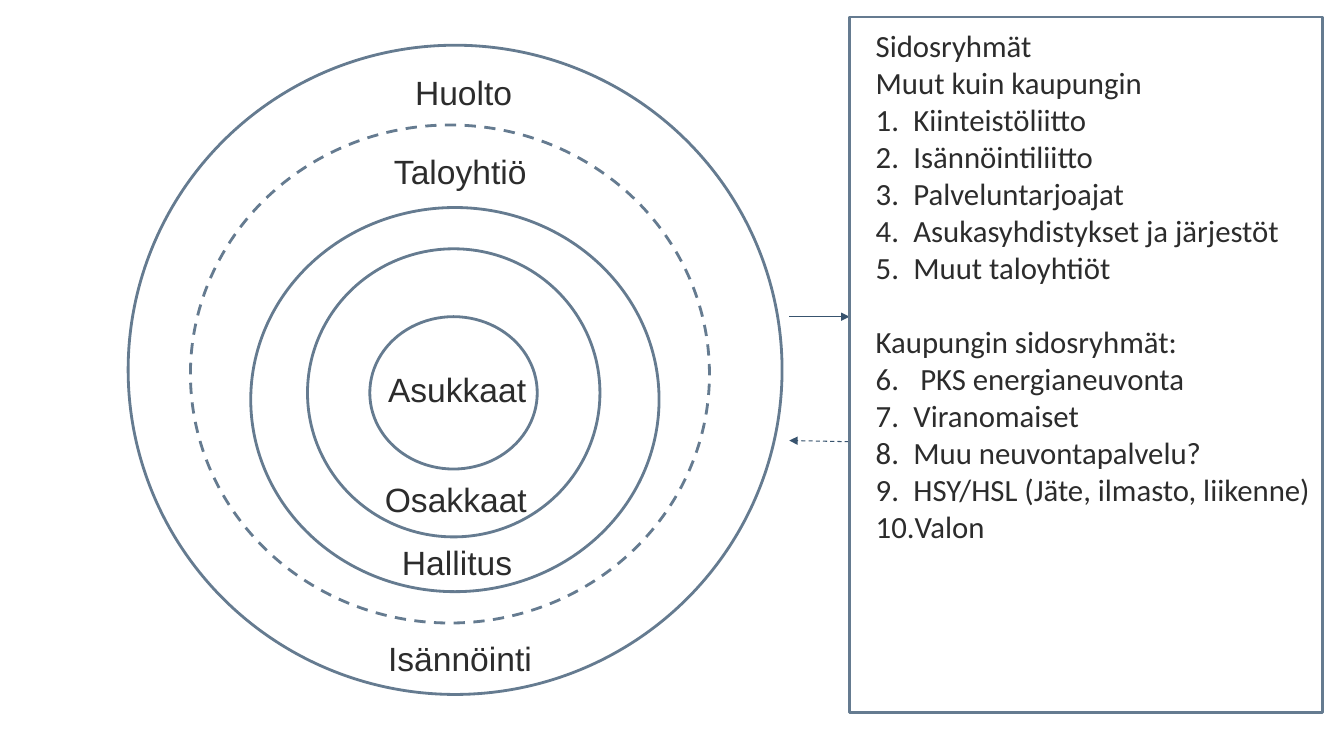
from lxml import etree
from pptx import Presentation
from pptx.dml.color import RGBColor
from pptx.enum.dml import MSO_LINE_DASH_STYLE as Dash
from pptx.enum.shapes import MSO_CONNECTOR as Connector, MSO_SHAPE as Shape
from pptx.oxml.ns import qn
from pptx.util import Cm, Pt

TEXT, OUTLINE, ARROW = "2C2C2C", "657B90", "38536E"

# Label: left, top, width, height in cm
ring_labels = {
    "Hallitus": (9.88, 13.54, 12.24, 1.3),
    "Huolto": (10.21, 1.68, 7.75, 1.3),
    "Isännöinti": (9.53, 15.95, 5.97, 2.31),
    "Asukkaat": (9.53, 9.17, 5.97, 1.27),
    "Taloyhtiö": (9.68, 3.68, 5.97, 1.3),
    "Osakkaat": (9.45, 11.94, 9.5, 1.3),
}
# Left, top, width, height in cm, dash; from the innermost ring outwards
rings = [
    ((9.32, 7.98, 4.22, 3.84), None),
    ((7.75, 6.27, 7.37, 7.26), None),
    ((6.32, 5.23, 10.29, 9.68), None),
    ((4.8, 3.15, 13.08, 12.55), Dash.DASH),
    ((3.23, 1.14, 16.48, 16.36), None),
]
# Start x, y and end x, y in cm, dash
arrows = [
    ((19.89, 7.98, 21.41, 7.98), None),
    ((21.39, 11.13, 19.89, 11.1), Dash.DASH),
]
stakeholder_frame = (21.41, 0.43, 11.91, 17.53)
stakeholder_area = (21.82, 0.56, 11.94, 14.35)
stakeholders = [
    (["Sidosryhmät", "Muut kuin kaupungin"],
     ["Kiinteistöliitto", "Isännöintiliitto", "Palveluntarjoajat",
      "Asukasyhdistykset ja järjestöt", "Muut taloyhtiöt"]),
    (["Kaupungin sidosryhmät:"],
     [" PKS energianeuvonta", "Viranomaiset", "Muu neuvontapalvelu?",
      "HSY/HSL (Jäte, ilmasto, liikenne)", "Valon"]),
]
label_format = {"name": "Arial", "size": Pt(24)}
list_format = {"name": "Calibri", "size": Pt(22)}
GROUP_GAP = Pt(26.4)
HANGING = Cm(0.95)


def color(hex_code):
    return RGBColor.from_string(hex_code)


def style_line(line, hex_code, width, dash):
    line.color.rgb = color(hex_code)
    for attribute, value in {"width": Pt(width), "dash_style": dash}.items():
        setattr(line, attribute, value)


def add_outline(slide, preset, place, dash=None):
    outline = slide.shapes.add_shape(preset, *map(Cm, place))
    outline.shadow.inherit = False
    outline.fill.background()
    style_line(outline.line, OUTLINE, 2, dash)


def add_text_frame(slide, place):
    frame = slide.shapes.add_textbox(*map(Cm, place)).text_frame
    frame.word_wrap = True
    return frame


def write(paragraph, text, font_format):
    run = paragraph.add_run()
    run.text = text
    run.font.color.rgb = color(TEXT)
    for attribute, value in font_format.items():
        setattr(run.font, attribute, value)


def number(paragraph, start):
    """Give the paragraph an automatic number from a list beginning at start."""
    properties = paragraph._p.get_or_add_pPr()
    properties.set("marL", str(HANGING))
    properties.set("indent", str(-HANGING))
    etree.SubElement(properties, qn("a:buFont"), typeface="+mj-lt")
    etree.SubElement(properties, qn("a:buAutoNum"),
                     type="arabicPeriod", startAt=str(start))


def add_arrow(slide, ends, dash):
    arrow = slide.shapes.add_connector(Connector.STRAIGHT, *map(Cm, ends))
    style_line(arrow.line, ARROW, 0.75, dash)
    etree.SubElement(arrow.line._get_or_add_ln(), qn("a:tailEnd"), type="triangle")
    etree.SubElement(arrow._element.spPr, qn("a:effectLst"))


def add_stakeholders(slide):
    frame = add_text_frame(slide, stakeholder_area)
    paragraph = frame.paragraphs[0]
    start = 1
    for group, (headings, members) in enumerate(stakeholders):
        for position, text in enumerate(headings + members):
            if group or position:
                paragraph = frame.add_paragraph()
            if group and position == 0:
                paragraph.space_before = GROUP_GAP
            if position >= len(headings):
                number(paragraph, start)
            write(paragraph, text, list_format)
        start += len(members)


def main():
    deck = Presentation()
    deck.slide_width, deck.slide_height = Cm(33.87), Cm(19.05)
    slide = deck.slides.add_slide(deck.slide_layouts[6])
    for label, place in ring_labels.items():
        write(add_text_frame(slide, place).paragraphs[0], label, label_format)
    for place, dash in rings:
        add_outline(slide, Shape.OVAL, place, dash)
    add_stakeholders(slide)
    for ends, dash in arrows:
        add_arrow(slide, ends, dash)
    add_outline(slide, Shape.RECTANGLE, stakeholder_frame)
    deck.save("out.pptx")


if __name__ == "__main__":
    main()
